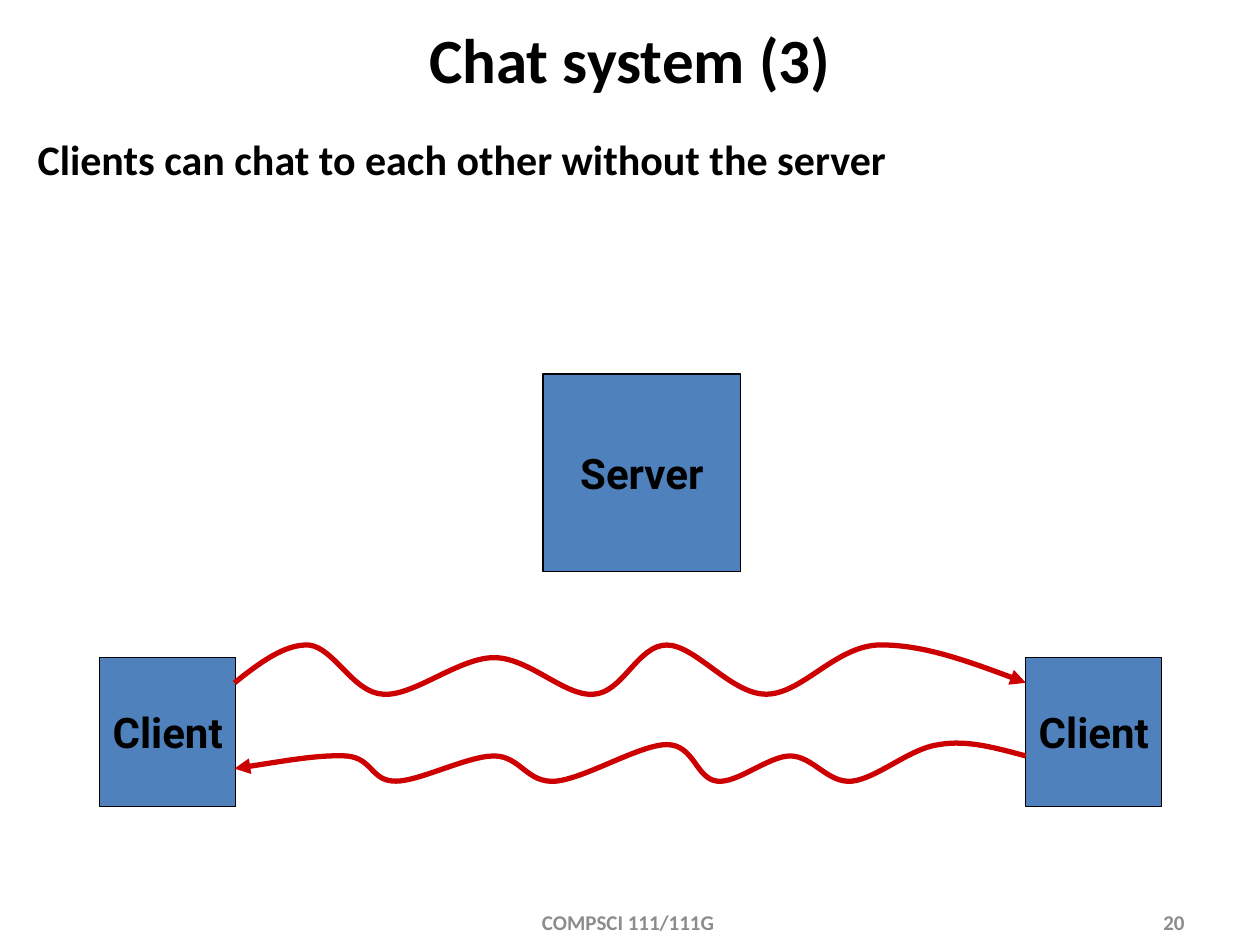
from lxml import etree
from pptx import Presentation
from pptx.dml.color import RGBColor
from pptx.enum import shapes, text
from pptx.oxml.ns import qn
from pptx.util import Pt

BLACK, GREY, BLUE, RED = "000000", "8C8C8C", "4F81BD", "CC0000"
LEFT, CENTER, RIGHT = text.PP_ALIGN.LEFT, text.PP_ALIGN.CENTER, text.PP_ALIGN.RIGHT
TOP, MIDDLE = text.MSO_ANCHOR.TOP, text.MSO_ANCHOR.MIDDLE

# Start point, then two control points and an end point for each curve
TO_RIGHT = [
    (0, 22.3),
    (14.4, 10.8), (28.8, 0), (42.5, 0.7),
    (57, 2.2), (67.7, 28.1), (85, 28.8),
    (102.2, 30.2), (128.2, 7.9), (148.3, 7.9),
    (168.5, 7.9), (188.6, 30.2), (205.2, 28.8),
    (221.8, 28.1), (230.4, 0.7), (247, 0.7),
    (263.5, 0.7), (283.7, 28.8), (303.8, 28.8),
    (324, 28.8), (342.7, 2.2), (367.2, 0.7),
    (391.7, 0), (421.9, 10.8), (452.2, 22.3),
]
TO_LEFT = [
    (452.2, 9.4),
    (435.6, 5), (419, 0), (402.5, 2.9),
    (385.9, 5), (367.2, 22.3), (352.8, 23.8),
    (339.1, 25.2), (330.5, 9.4), (317.5, 9.4),
    (305.3, 9.4), (287.3, 25.2), (275.8, 23.8),
    (263.5, 22.3), (262.8, 2.9), (247, 2.9),
    (231.8, 2.9), (200.2, 22.3), (183.6, 23.8),
    (167, 25.2), (163.4, 9.4), (148.3, 9.4),
    (133.2, 9.4), (105.8, 23.8), (92.2, 23.8),
    (77.8, 23.8), (79.2, 10.8), (64.1, 9.4),
    (48.2, 8.6), (24.5, 13), (0, 16.6),
]


def rgb(color):
    return RGBColor.from_string(color)


def write(sp, words, size=24, font="Calibri", color=BLACK, align=LEFT,
          anchor=MIDDLE, wrap=True, before=0):
    tf = sp.text_frame
    tf.word_wrap = wrap
    tf.vertical_anchor = anchor
    p = tf.paragraphs[0]
    p.alignment = align
    p.space_before = Pt(before)
    r = p.add_run()
    r.text = words
    r.font.size = Pt(size)
    r.font.name = font
    r.font.bold = True
    r.font.color.rgb = rgb(color)


def add_text(s, box, words, **style):
    write(s.shapes.add_textbox(*map(Pt, box)), words, **style)


def add_machine(s, box, name):
    sp = s.shapes.add_shape(shapes.MSO_SHAPE.RECTANGLE, *map(Pt, box))
    sp.shadow.inherit = False
    sp.fill.solid()
    sp.fill.fore_color.rgb = rgb(BLUE)
    sp.line.color.rgb = rgb(BLACK)
    sp.line.width = Pt(0.75)
    write(sp, name, font="Roboto", align=CENTER, wrap=False)


def add_wave(s, left, top, points):
    """Draw a curved arrow through points given relative to left and top."""
    start, *rest = [(Pt(left + x), Pt(top + y)) for x, y in points]
    builder = s.shapes.build_freeform(*start)
    builder.add_line_segments(rest, close=False)
    sp = builder.convert_to_shape()
    sp.shadow.inherit = False
    sp.fill.background()
    sp.line.color.rgb = rgb(RED)
    sp.line.width = Pt(3)
    # Each three straight segments become one Bezier curve
    segments = list(sp._element.iter(qn("a:lnTo")))
    outline = segments[0].getparent()
    for i in range(0, len(segments), 3):
        curve = etree.SubElement(outline, qn("a:cubicBezTo"))
        for segment in segments[i:i + 3]:
            curve.append(segment[0])
            outline.remove(segment)
    etree.SubElement(sp.line._get_or_add_ln(), qn("a:tailEnd"),
                     type="triangle", w="med", len="med")


def add_heading(s, left, top, width):
    add_text(s, (left, top, width, 49.7), "Chat system (3)", size=36, align=CENTER)
    add_text(s, (left + 7.2, top + 64.1, width - 14.4, 430.6),
             "Clients can chat to each other without the server",
             anchor=TOP, before=4.8)


def add_diagram(s, left, top):
    add_machine(s, (left + 253.4, top, 113, 113), "Server")
    for x in (0, 529.2):
        add_machine(s, (left + x, top + 162, 77.8, 85), "Client")
    add_wave(s, left + 77.1, top + 154.1, TO_RIGHT)
    add_wave(s, left + 77.1, top + 208.8, TO_LEFT)


def add_footer(s, top, height):
    style = dict(size=12, color=GREY)
    add_text(s, (246.2, top, 228.2, height), "COMPSCI 111/111G ", align=CENTER, **style)
    add_text(s, (516.2, top, 167.8, height), "20", align=RIGHT, **style)


def main():
    prs = Presentation()
    prs.slide_width, prs.slide_height = Pt(720), Pt(540)
    s = prs.slides.add_slide(prs.slide_layouts[6])
    add_heading(s, 7.2, 8.6, 705.6)
    add_diagram(s, 56.9, 213.8)
    add_footer(s, 517, 19.4)
    prs.save("out.pptx")


if __name__ == "__main__":
    main()
